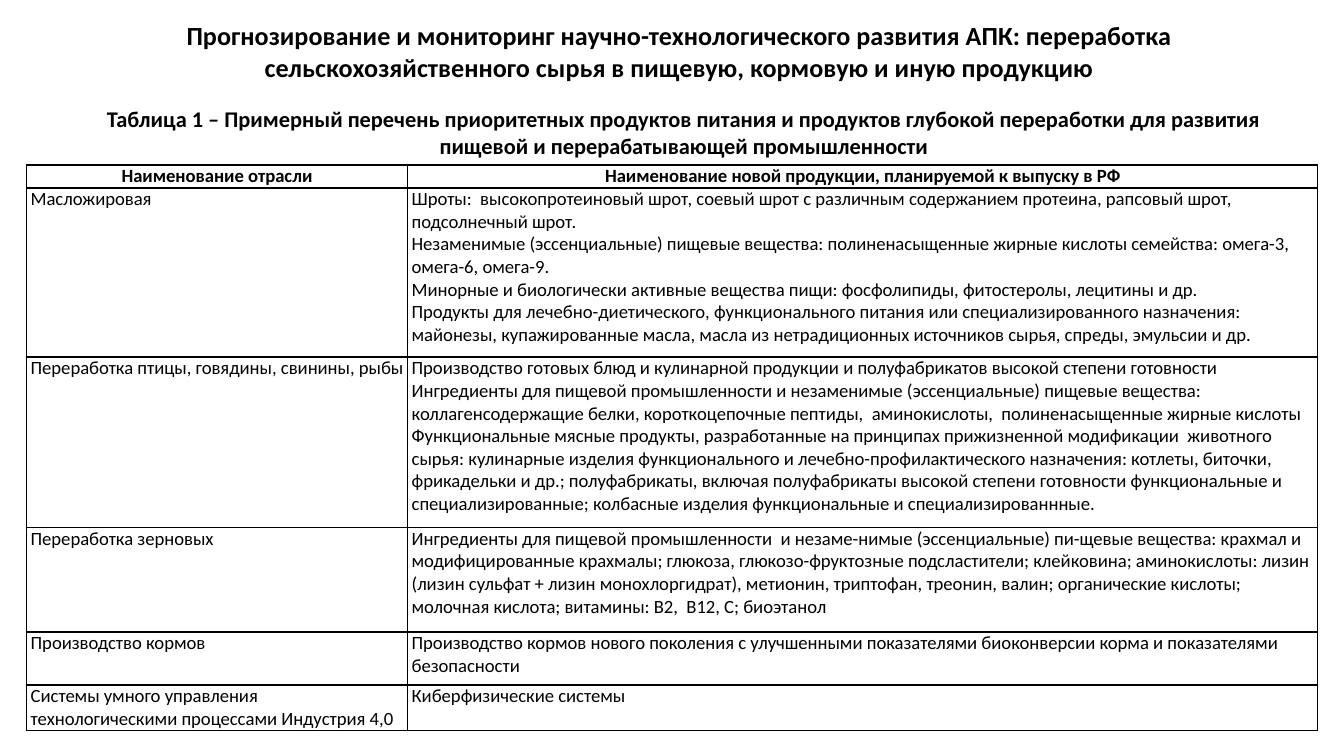
from dataclasses import dataclass

from lxml.etree import SubElement
from pptx import Presentation
from pptx.dml.color import RGBColor
from pptx.enum.text import MSO_ANCHOR as Anchor, PP_ALIGN as Align
from pptx.oxml.ns import qn
from pptx.slide import Slide
from pptx.table import _Cell as Cell
from pptx.text.text import TextFrame
from pptx.util import Cm, Pt


@dataclass(frozen=True)
class Theme:
    font: str = "Calibri"
    ink: str = "000000"
    heading: int = 14
    caption: int = 12
    body: int = 10
    border: int = 1


@dataclass(frozen=True)
class Heading:
    text: str
    left: float
    top: float
    width: float
    height: float
    size: int
    anchor: Anchor


@dataclass(frozen=True)
class Row:
    height: float
    industry: str
    products: tuple[str, ...]
    header: bool = False


THEME = Theme()

HEADINGS = (
    Heading(
        "Прогнозирование и мониторинг научно-технологического развития АПК: переработка "
        "сельскохозяйственного сырья в пищевую, кормовую и иную продукцию",
        0.89, 0.25, 23.9, 1.45, THEME.heading, Anchor.TOP),
    Heading(
        "Таблица 1 – Примерный перечень приоритетных продуктов питания и продуктов глубокой "
        "переработки для развития пищевой и перерабатывающей промышленности",
        1.5, 2.13, 22.86, 0.74, THEME.caption, Anchor.MIDDLE),
)

TABLE_LEFT, TABLE_TOP = 0.5, 3.12
COLUMNS = (7.2, 17.2)
ROWS = (
    Row(0.43, "Наименование отрасли",
        ("Наименование новой продукции, планируемой к выпуску в РФ",), header=True),
    Row(3.2, "Масложировая", (
        "Шроты:  высокопротеиновый шрот, соевый шрот с различным содержанием протеина, "
        "рапсовый шрот, подсолнечный шрот.",
        "Незаменимые (эссенциальные) пищевые вещества: полиненасыщенные жирные кислоты "
        "семейства: омега-3, омега-6, омега-9.",
        "Минорные и биологически активные вещества пищи: фосфолипиды, фитостеролы, "
        "лецитины и др.",
        "Продукты для лечебно-диетического, функционального питания или специализированного "
        "назначения: майонезы, купажированные масла, масла из нетрадиционных источников "
        "сырья, спреды, эмульсии и др.")),
    Row(3.22, "Переработка птицы, говядины, свинины, рыбы", (
        "Производство готовых блюд и кулинарной продукции и полуфабрикатов высокой степени "
        "готовности",
        "Ингредиенты для пищевой промышленности и незаменимые (эссенциальные) пищевые "
        "вещества:  коллагенсодержащие белки, короткоцепочные пептиды,  аминокислоты,  "
        "полиненасыщенные жирные кислоты",
        "Функциональные мясные продукты, разработанные на принципах прижизненной "
        "модификации  животного сырья: кулинарные изделия функционального и "
        "лечебно-профилактического назначения: котлеты, биточки, фрикадельки и др.; "
        "полуфабрикаты, включая полуфабрикаты высокой степени готовности функциональные и "
        "специализированные; колбасные изделия функциональные и специализированнные.")),
    Row(1.98, "Переработка зерновых", (
        "Ингредиенты для пищевой промышленности  и незаме-нимые (эссенциальные) пи-щевые "
        "вещества: крахмал и модифицированные крахмалы; глюкоза, глюкозо-фруктозные "
        "подсластители; клейковина; аминокислоты: лизин (лизин сульфат + лизин "
        "монохлоргидрат), метионин, триптофан, треонин, валин; органические кислоты;  "
        "молочная кислота; витамины: В2,  В12, С; биоэтанол",)),
    Row(1, "Производство кормов", (
        "Производство кормов нового поколения с улучшенными показателями биоконверсии корма "
        "и показателями безопасности",)),
    Row(0.86, "Системы умного управления технологическими процессами Индустрия 4,0",
        ("Киберфизические системы",)),
)


def write(tf: TextFrame, text: str, size: int, bold: bool, align: Align) -> None:
    tf.text = text
    for p in tf.paragraphs:
        p.alignment = align
        for r in p.runs:
            r.font.name = THEME.font
            r.font.size = Pt(size)
            r.font.bold = bold
            r.font.color.rgb = RGBColor.from_string(THEME.ink)


def add_heading(s: Slide, heading: Heading) -> None:
    box = s.shapes.add_textbox(Cm(heading.left), Cm(heading.top),
                               Cm(heading.width), Cm(heading.height))
    tf = box.text_frame
    tf.word_wrap = True
    tf.vertical_anchor = heading.anchor
    write(tf, heading.text, heading.size, True, Align.CENTER)


def set_borders(cell: Cell) -> None:
    props = cell._tc.get_or_add_tcPr()
    for index, side in enumerate(("a:lnL", "a:lnR", "a:lnT", "a:lnB")):
        line = props.makeelement(qn(side), {"w": str(Pt(THEME.border))})
        fill = SubElement(line, qn("a:solidFill"))
        SubElement(fill, qn("a:srgbClr"), val=THEME.ink)
        props.insert(index, line)


def fill_cell(cell: Cell, text: str, header: bool) -> None:
    cell.margin_left = cell.margin_right = Cm(0.08)
    cell.margin_top = cell.margin_bottom = Cm(0)
    cell.fill.background()
    set_borders(cell)
    write(cell.text_frame, text, THEME.body, header, Align.CENTER if header else Align.LEFT)


def add_products_table(s: Slide) -> None:
    frame = s.shapes.add_table(len(ROWS), len(COLUMNS), Cm(TABLE_LEFT), Cm(TABLE_TOP),
                               Cm(sum(COLUMNS)), Cm(sum(row.height for row in ROWS)))
    table = frame.table
    table.first_row = table.horz_banding = False
    for column, width in zip(table.columns, COLUMNS):
        column.width = Cm(width)
    for i, row in enumerate(ROWS):
        table.rows[i].height = Cm(row.height)
        for j, text in enumerate((row.industry, "\n".join(row.products))):
            fill_cell(table.cell(i, j), text, row.header)


def main() -> None:
    prs = Presentation()
    prs.slide_width, prs.slide_height = Cm(25.4), Cm(14.29)
    s = prs.slides.add_slide(prs.slide_layouts[6])
    for heading in HEADINGS:
        add_heading(s, heading)
    add_products_table(s)
    prs.save("out.pptx")


if __name__ == "__main__":
    main()
